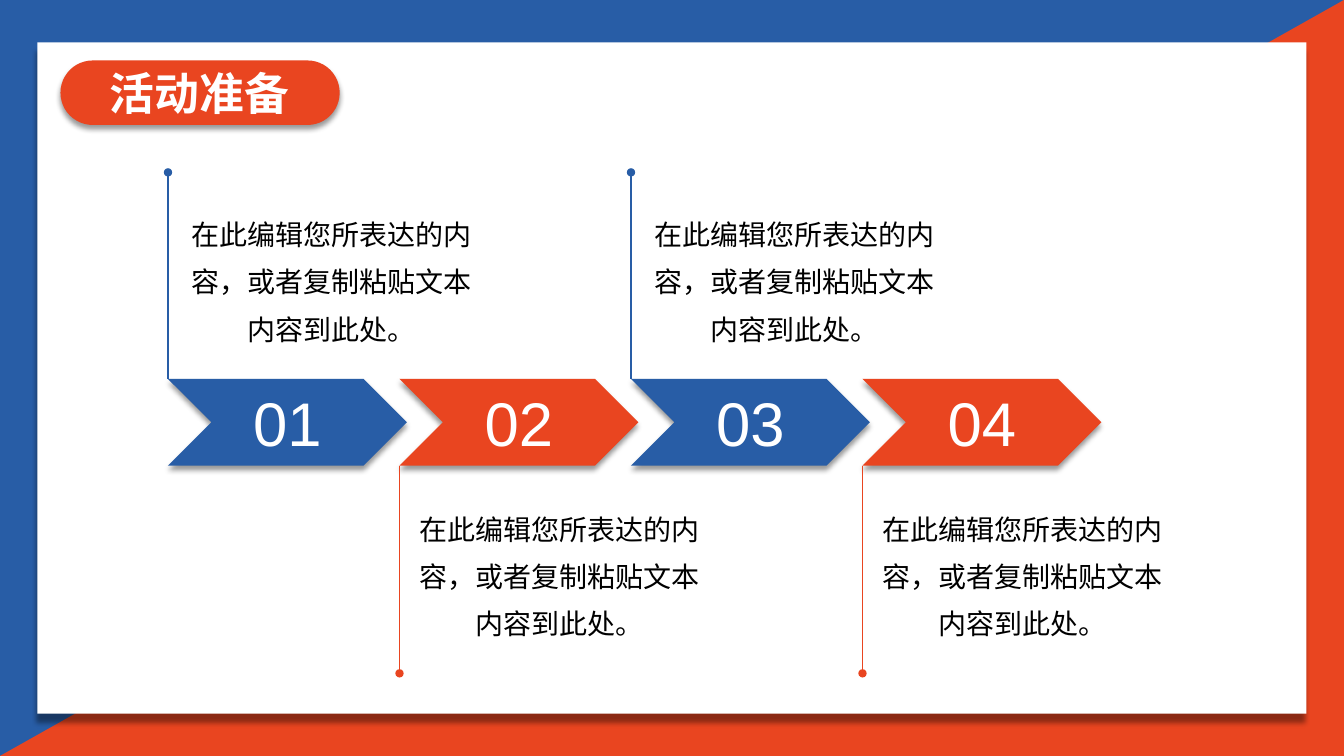
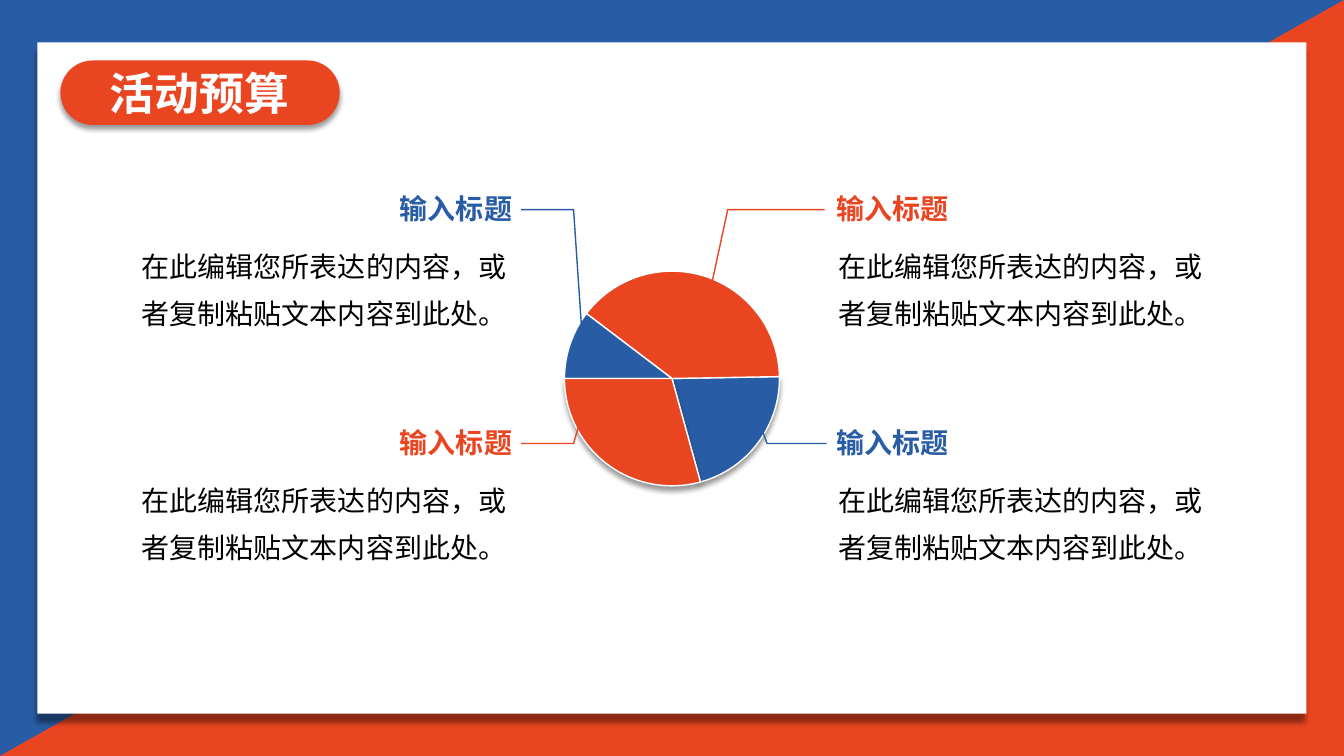
from lxml.etree import SubElement
from pptx import Presentation
from pptx.dml.color import RGBColor
from pptx.enum.shapes import MSO_CONNECTOR, MSO_SHAPE
from pptx.enum.text import MSO_ANCHOR, MSO_AUTO_SIZE, PP_ALIGN
from pptx.oxml.ns import qn
from pptx.util import Inches, Pt

BLUE = RGBColor(0x28, 0x5D, 0xA6)
RED = RGBColor(0xE9, 0x45, 0x20)
WHITE = RGBColor(0xFF, 0xFF, 0xFF)
BLACK = RGBColor(0x00, 0x00, 0x00)
FONT = "Arial"
BODY = "在此编辑您所表达的内容，或者复制粘贴文本内容到此处。"
HEAD = "输入标题"

# Grid of the slide
WIDE, HIGH = Inches(13.33), Inches(7.5)
COLS, ROWS = 40, 30


def across(cols):
    return round(cols * WIDE / COLS)


def down(rows):
    return round(rows * HIGH / ROWS)


def place(x, y, w, h):
    return across(x), down(y), across(w), down(h)


def write(frame, words, size=20, color=BLACK, bold=False,
          align=PP_ALIGN.CENTER, space=None):
    frame.word_wrap = True
    frame.auto_size = MSO_AUTO_SIZE.NONE
    para = frame.paragraphs[0]
    para.alignment = align
    if space:
        para.line_spacing = space
    run = para.add_run()
    run.text = words
    font = run.font
    font.name, font.size, font.bold = FONT, Pt(size), bold
    font.color.rgb = color


def shade(shape, dist=3):
    """Add a soft black shadow below the shape."""
    effects = shape.element.spPr.find(qn("a:effectLst"))
    outer = SubElement(effects, qn("a:outerShdw"), blurRad=str(Pt(4)),
                       dist=str(Pt(dist)), dir="5400000", algn="t",
                       rotWithShape="0")
    tint = SubElement(outer, qn("a:srgbClr"), val=str(BLACK))
    SubElement(tint, qn("a:alpha"), val="40000")


class Deck:
    def __init__(self):
        self.show = Presentation()
        self.show.slide_width, self.show.slide_height = WIDE, HIGH
        self.slide = None

    def page(self, title):
        """Start a slide with its frame, card and title pill."""
        self.slide = self.show.slides.add_slide(self.show.slide_layouts[5])
        self.shape(MSO_SHAPE.RECTANGLE, 0, 0, COLS, ROWS, BLUE)
        wedge = self.shape(MSO_SHAPE.RIGHT_TRIANGLE, 0, 0, COLS, ROWS, RED)
        wedge.element.spPr.get_or_add_xfrm().set("flipH", "1")
        shade(self.shape(MSO_SHAPE.RECTANGLE, 1.11, 1.68, 37.77, 26.64, WHITE), 7)
        pill = self.shape(MSO_SHAPE.ROUNDED_RECTANGLE, 1.8, 2.4, 8.31, 2.56, RED)
        pill.adjustments[0] = 0.5
        shade(pill)
        # The title lies above the pill
        name = self.slide.shapes.title
        name.left, name.top, name.width, name.height = place(2.7, 2.4, 6.48, 2.56)
        name.text_frame.vertical_anchor = MSO_ANCHOR.MIDDLE
        write(name.text_frame, title, size=32, color=WHITE, bold=True)
        self.slide.shapes.element.append(name.element)

    def shape(self, kind, x, y, w, h, fill):
        shape = self.slide.shapes.add_shape(kind, *place(x, y, w, h))
        shape.shadow.inherit = False
        shape.fill.solid()
        shape.fill.fore_color.rgb = fill
        shape.line.fill.background()
        return shape

    def text(self, words, x, y, w, h, **style):
        box = self.slide.shapes.add_textbox(*place(x, y, w, h))
        write(box.text_frame, words, **style)

    def arrow(self, words, x, y, w, h, fill):
        shape = self.shape(MSO_SHAPE.CHEVRON, x, y, w, h, fill)
        shade(shape)
        write(shape.text_frame, words, size=44, color=WHITE)

    def stem(self, x, start, end, color):
        """Draw an upright line that ends in a dot."""
        line = self.slide.shapes.add_connector(
            MSO_CONNECTOR.STRAIGHT, across(x), down(start), across(x), down(end))
        line.line.color.rgb = color
        line.line.width = Pt(1)
        SubElement(line.line._get_or_add_ln(), qn("a:tailEnd"), type="oval")
        SubElement(line.element.spPr, qn("a:effectLst"))

    def slice(self, start, end, fill, deep):
        """Draw a sector; angles run clockwise from the right."""
        part = self.shape(MSO_SHAPE.PIE, 16.8, 10.76, 6.4, 8.52, fill)
        for i, angle in enumerate((start, end)):
            part.adjustments[i] = angle * 0.6
        part.line.color.rgb = WHITE
        part.line.width = Pt(1)
        if deep:
            shade(part)

    def leader(self, points, color):
        first, *rest = [(across(x), down(y)) for x, y in points]
        pen = self.slide.shapes.build_freeform(*first)
        pen.add_line_segments(rest, close=False)
        line = pen.convert_to_shape()
        line.shadow.inherit = False
        line.fill.background()
        line.line.color.rgb = color
        line.line.width = Pt(1)


def steps(deck):
    deck.page("活动准备")
    top, tall, gap = 15.04, 3.44, 6.89
    for i in range(4):
        x, color = 5 + i * gap, (BLUE, RED)[i % 2]
        deck.arrow(f"{i + 1:02}", x, top, 7.11, tall, color)
        # Notes alternate above and below the arrows
        if i % 2:
            start, end, left, note = top + tall, 26.72, x + 0.22, 19.6
        else:
            start, end, left, note = top, 6.84, x + 0.32, 7.92
        deck.stem(x, start, end, color)
        deck.text(BODY, left, note, 9.09, 6.04, space=1.4)


def budget(deck):
    deck.page("活动预算")
    # Pie
    for start, end, fill, deep in ((359, 74.6, BLUE, True),
                                   (217.2, 359, RED, False),
                                   (180, 217.2, BLUE, False),
                                   (74.6, 180, RED, True)):
        deck.slice(start, end, fill, deep)
    # Notes: head left, body left, alignment, leader columns, colours
    sides = (
        (9.33, 3.75, PP_ALIGN.RIGHT,
         ((17.34, 17.07, 15.51), (17.34, 17.07, 15.51)), (BLUE, RED)),
        (24.6, 24.48, PP_ALIGN.LEFT,
         ((21.18, 21.66, 24.54), (22.5, 22.83, 24.6)), (RED, BLUE)),
    )
    # Row of each leader's end at the pie: upper, lower
    ends = ((13.64, 16.36), (11.28, 16.36))
    for (head, body, align, bends, colors), tips in zip(sides, ends):
        for i, (xs, color, tip) in enumerate(zip(bends, colors, tips)):
            drop = i * 9.28
            deck.text(HEAD, head, 7.4 + drop, 6.21, 1.76,
                      color=color, bold=True, align=align)
            deck.text(BODY, body, 9.16 + drop, 11.79, 4.16, space=1.4)
            level = 8.32 + drop
            deck.leader(zip(xs, (tip, level, level)), color)


def main():
    deck = Deck()
    steps(deck)
    budget(deck)
    deck.show.save("out.pptx")


if __name__ == "__main__":
    main()
